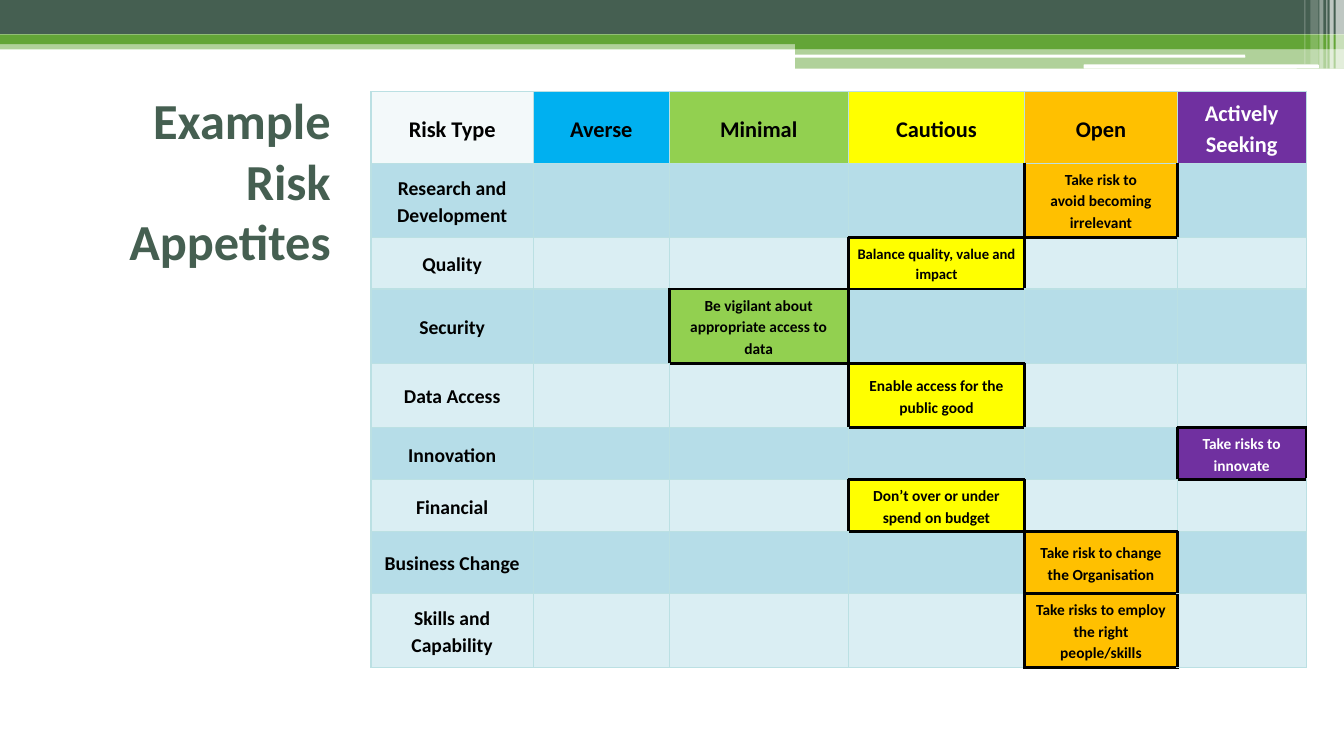
from lxml import etree
from pptx import Presentation
from pptx.dml.color import RGBColor
from pptx.enum.shapes import MSO_SHAPE
from pptx.enum.text import MSO_ANCHOR, PP_ALIGN
from pptx.oxml.ns import qn
from pptx.util import Pt

RECTANGLE = MSO_SHAPE.RECTANGLE
ROUNDED = MSO_SHAPE.ROUNDED_RECTANGLE
MIDDLE = MSO_ANCHOR.MIDDLE
CENTER = PP_ALIGN.CENTER
RIGHT = PP_ALIGN.RIGHT

FONT = "Calibri"
BLACK, WHITE = "000000", "FFFFFF"
DARK_GREEN, GREEN = "455F51", "63A537"
GRID = "BBE0E3"
ROW_FILLS = ("DAEEF3", "B6DDE8")

BANDS = [
    (RECTANGLE, 0, 28.8, 960, 6.5, GREEN, 50),
    (RECTANGLE, 0, 0, 960, 24.5, DARK_GREEN, 100),
    (RECTANGLE, 0, 24.5, 960, 7, GREEN, 100),
    (RECTANGLE, 568, 28, 392, 7, GREEN, 100),
    (RECTANGLE, 568, 34.6, 392, 14.4, GREEN, 50),
    (ROUNDED, 567.5, 39, 322, 2.2, WHITE, 100),
    (ROUNDED, 774, 46.1, 168, 2.9, WHITE, 100),
    (RECTANGLE, 954, 0, 6, 49, WHITE, 65),
    (RECTANGLE, 949.7, 0, 2.9, 49, WHITE, 65),
    (RECTANGLE, 947.5, 0, 0.7, 49, WHITE, 60),
    (RECTANGLE, 942.5, 0, 2.9, 49, WHITE, 40),
    (RECTANGLE, 936, 0, 5.8, 46, WHITE, 20),
    (RECTANGLE, 931.7, 0, 0.7, 46, WHITE, 30),
]

HEADINGS = [
    ("Risk Type", "F3F9FA", BLACK),
    ("Averse", "00B0F0", BLACK),
    ("Minimal", "92D050", BLACK),
    ("Cautious", "FFFF00", BLACK),
    ("Open", "FFC000", BLACK),
    ("Actively Seeking", "7030A0", WHITE),
]
RISKS = [
    ("Research and Development", 4, "Take risk to\navoid becoming irrelevant", 11),
    ("Quality", 3, "Balance quality, value and impact", 10.5),
    ("Security", 2, "Be vigilant about appropriate access to data", 11),
    ("Data Access", 3, "Enable access for the public good", 11),
    ("Innovation", 5, "Take risks to innovate", 11),
    ("Financial", 3, "Don’t over or under spend on budget", 11),
    ("Business Change", 4, "Take risk to change the Organisation", 11),
    ("Skills and Capability", 4, "Take risks to employ the right people/skills", 11),
]
COLUMN_WIDTHS = (116, 97, 128, 126, 109, 92)
ROW_HEIGHTS = (51, 53, 37, 53, 46, 37, 37, 44, 53)


def color(value):
    return RGBColor.from_string(value)


def place(shape, box):
    shape.left, shape.top, shape.width, shape.height = map(Pt, box)


def format_span(span, size, value):
    span.font.name = FONT
    span.font.size = Pt(size)
    span.font.bold = True
    span.font.color.rgb = color(value)


def add_bands(page, left, top):
    for kind, x, y, width, height, value, opacity in BANDS:
        band = page.shapes.add_shape(
            kind, Pt(left + x), Pt(top + y), Pt(width), Pt(height))
        band.shadow.inherit = False
        band.line.fill.background()
        band.fill.solid()
        band.fill.fore_color.rgb = color(value)
        if opacity < 100:
            tint = band.element.spPr.find(qn("a:solidFill"))[0]
            etree.SubElement(tint, qn("a:alpha")).set("val", str(opacity * 1000))


def add_title(page, box):
    title = page.shapes.title
    place(title, box)
    frame = title.text_frame
    frame.word_wrap = True
    frame.vertical_anchor = MIDDLE
    frame.text = "Example\vRisk\vAppetites"
    para = frame.paragraphs[0]
    para.alignment = RIGHT
    for span in para.runs:
        format_span(span, 36, DARK_GREEN)


def fill_cell(cell, text, fill, size, value, margins, space_after=0):
    cell.fill.solid()
    cell.fill.fore_color.rgb = color(fill)
    cell.vertical_anchor = MIDDLE
    cell.margin_left = cell.margin_right = Pt(margins[0])
    cell.margin_top = cell.margin_bottom = Pt(margins[1])
    cell.text_frame.text = text
    for para in cell.text_frame.paragraphs:
        para.alignment = CENTER
        para.line_spacing = 1.15
        para.space_after = Pt(space_after)
        for span in para.runs:
            format_span(span, size, value)


def is_appetite(row, column):
    return 1 <= row <= len(RISKS) and RISKS[row - 1][1] == column


def border_cell(cell, row, column):
    sides = (("L", 0, -1), ("R", 0, 1), ("T", -1, 0), ("B", 1, 0))
    properties = cell._tc.get_or_add_tcPr()
    for index, (side, down, across) in enumerate(sides):
        under_heading = row + down == 0 or (row == 0 and side == "B")
        heavy = not under_heading and (
            is_appetite(row, column) or is_appetite(row + down, column + across))
        line = etree.Element(qn(f"a:ln{side}"))
        line.set("w", str(Pt(2.25 if heavy else 1)))
        fill = etree.SubElement(line, qn("a:solidFill"))
        etree.SubElement(fill, qn("a:srgbClr")).set("val", BLACK if heavy else GRID)
        properties.insert(index, line)


def add_risk_table(page, box):
    table = page.shapes.add_table(
        len(ROW_HEIGHTS), len(COLUMN_WIDTHS), *map(Pt, box)).table
    table.first_row = table.horz_banding = False
    for column, width in zip(table.columns, COLUMN_WIDTHS):
        column.width = Pt(width)
    for row, height in zip(table.rows, ROW_HEIGHTS):
        row.height = Pt(height)

    for column, (heading, fill, value) in enumerate(HEADINGS):
        fill_cell(table.cell(0, column), heading, fill, 16, value, (3, 3), 10)
    for row, (risk, appetite, statement, size) in enumerate(RISKS, 1):
        for column, (_, accent, value) in enumerate(HEADINGS):
            cell = table.cell(row, column)
            if column == appetite:
                side = 3 if row == 1 else 6.5
                fill_cell(cell, statement, accent, size, value, (side, 3))
            else:
                text = risk if column == 0 else ""
                fill_cell(cell, text, ROW_FILLS[row % 2], 14, BLACK, (5, 0.5))

    for row in range(len(ROW_HEIGHTS)):
        for column in range(len(COLUMN_WIDTHS)):
            border_cell(table.cell(row, column), row, column)


def main():
    deck = Presentation()
    deck.slide_width, deck.slide_height = Pt(960), Pt(540)
    page = deck.slides.add_slide(deck.slide_layouts[5])
    add_bands(page, 0, 0)
    add_title(page, (42, 65.5, 201.5, 126.5))
    add_risk_table(page, (265, 65.5, sum(COLUMN_WIDTHS), sum(ROW_HEIGHTS)))
    deck.save("out.pptx")


if __name__ == "__main__":
    main()
